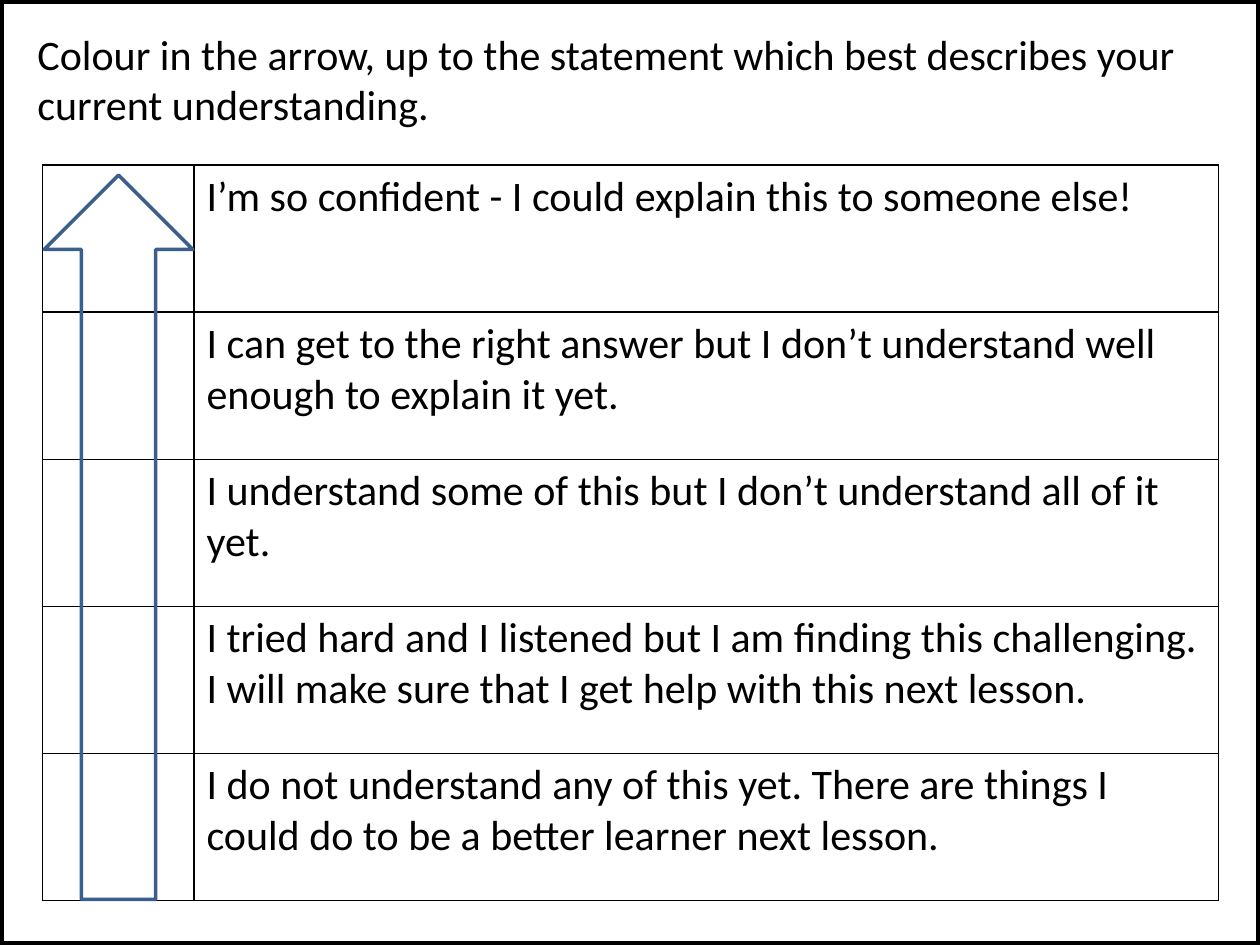
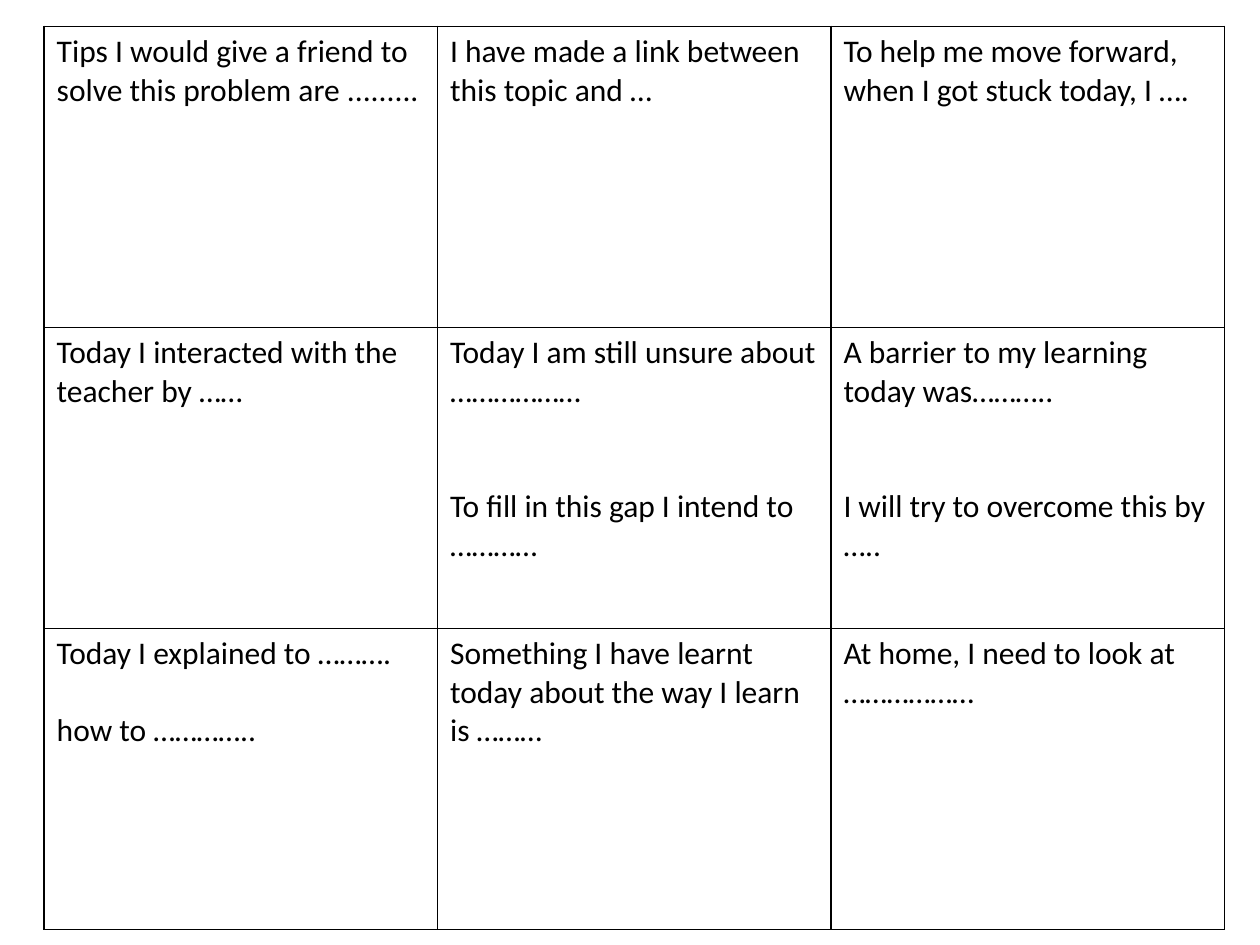
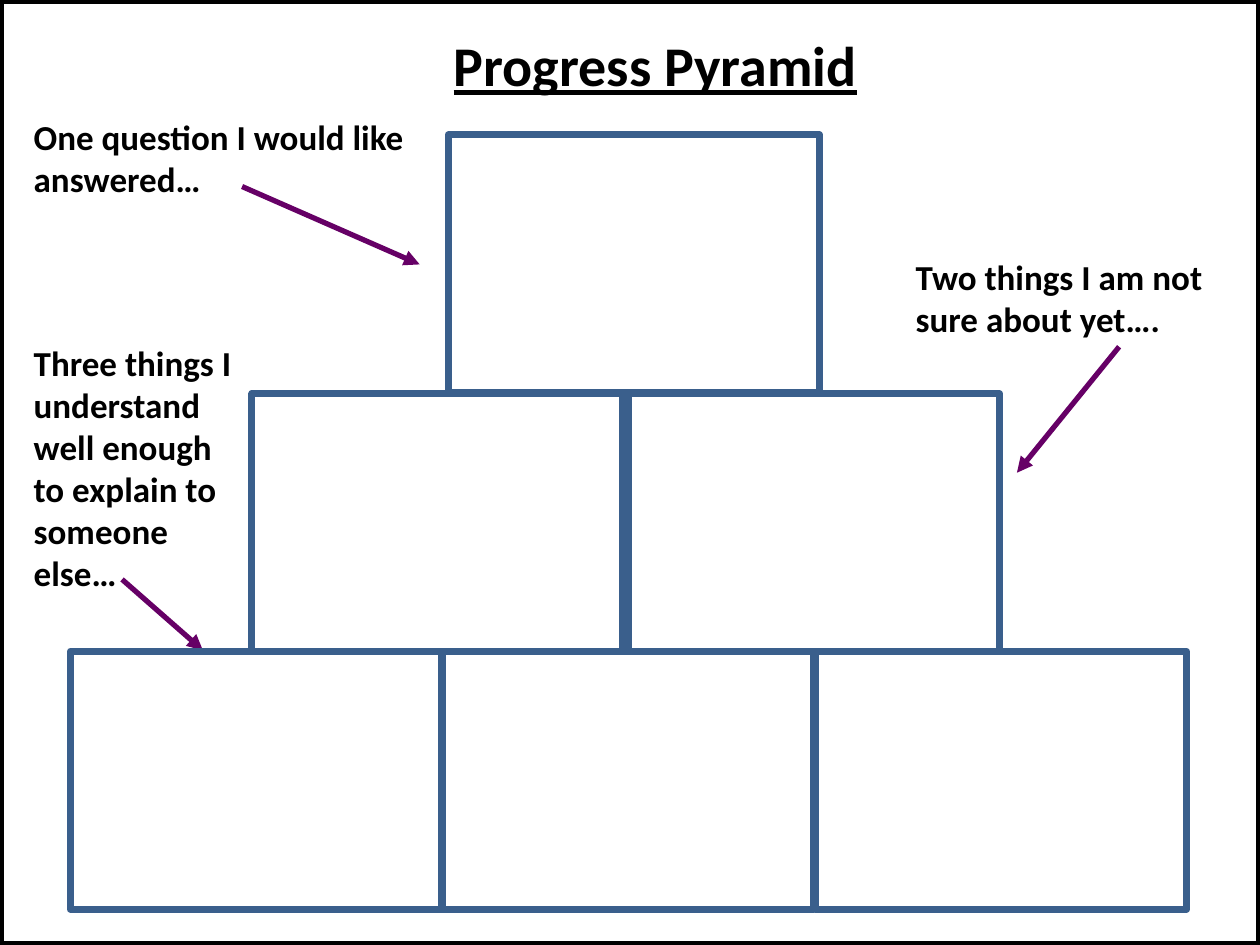
from dataclasses import dataclass

from lxml.etree import SubElement
from pptx import Presentation
from pptx.dml.color import RGBColor
from pptx.enum.shapes import MSO_CONNECTOR, MSO_SHAPE
from pptx.enum.text import MSO_ANCHOR, MSO_AUTO_SIZE, PP_ALIGN
from pptx.oxml.ns import qn
from pptx.slide import Slide
from pptx.table import _Cell
from pptx.text.text import TextFrame
from pptx.util import Cm, Pt


@dataclass(frozen=True)
class Theme:
    font: str = "Calibri"
    ink: str = "000000"
    outline: str = "3A5F8C"
    pointer: str = "660066"
    heading_size: int = 32
    statement_size: int = 24
    label_size: int = 20
    prompt_size: int = 18
    frame_width: int = 5
    brick_width: int = 4
    pointer_width: int = 3
    arrow_width: int = 2
    grid_width: int = 1


THEME = Theme()
PAGE_WIDTH, PAGE_HEIGHT = 25.4, 19.05


@dataclass(frozen=True)
class Area:
    """A rectangle in centimetres."""
    left: float
    top: float
    width: float
    height: float

    def lengths(self) -> tuple[Cm, Cm, Cm, Cm]:
        return Cm(self.left), Cm(self.top), Cm(self.width), Cm(self.height)


@dataclass(frozen=True)
class Style:
    size: int
    bold: bool = False
    underline: bool = False
    align: PP_ALIGN = PP_ALIGN.LEFT


@dataclass(frozen=True)
class Prompt:
    """Cell paragraphs, with a writing gap in points between them."""
    texts: tuple[str, ...]
    gap: int = 0


@dataclass(frozen=True)
class Label:
    text: str
    area: Area
    arrow_start: tuple[float, float]
    arrow_end: tuple[float, float]


@dataclass(frozen=True)
class Tier:
    left: float
    top: float
    bricks: int
    pitch: float


# Slide content
STATEMENTS = (
    "I’m so confident - I could explain this to someone else!",
    "I can get to the right answer but I don’t understand well enough to explain it yet.",
    "I understand some of this but I don’t understand all of it yet.",
    "I tried hard and I listened but I am finding this challenging. "
    "I will make sure that I get help with this next lesson.",
    "I do not understand any of this yet. "
    "There are things I could do to be a better learner next lesson.",
)
PROMPTS = (
    (
        Prompt(("Tips I would give a friend to solve this problem are .........",)),
        Prompt(("I have made a link between this topic and …",)),
        Prompt(("To help me move forward, when I got stuck today, I ….",)),
    ),
    (
        Prompt(("Today I interacted with the teacher by ……",)),
        Prompt(("Today I am still unsure about ………………",
                "To fill in this gap I intend to …………"), 44),
        Prompt(("A barrier to my learning today was………..",
                "I will try to overcome this by ….."), 44),
    ),
    (
        Prompt(("Today I explained to ……….", "how to ………….."), 22),
        Prompt(("Something I have learnt today about the way I learn is ………",)),
        Prompt(("At home, I need to look at ………………",)),
    ),
)
LABELS = (
    Label("One question I would like answered…",
          Area(0.43, 2.21, 8.15, 1.96), (4.88, 3.76), (8.46, 5.33)),
    Label("Two things I am not sure about yet….",
          Area(18.21, 5.03, 6.71, 1.96), (22.56, 6.99), (20.5, 9.53)),
    Label("Three things I understand well enough to explain to someone else…",
          Area(0.43, 6.76, 4.72, 5.38), (2.46, 11.68), (4.09, 13.11)),
)
TIERS = (
    Tier(1.42, 13.13, 3, 7.51),
    Tier(5.08, 7.94, 2, 7.59),
    Tier(9.04, 2.72, 1, 0),
)
BRICK_WIDTH, BRICK_HEIGHT = 7.48, 5.2


# Shared drawing functions
def write(frame: TextFrame, texts: tuple[str, ...], style: Style, gap: int = 0) -> None:
    for index, text in enumerate(texts):
        para = frame.paragraphs[0] if index == 0 else frame.add_paragraph()
        para.alignment = style.align
        if index:
            para.space_before = Pt(gap)
        span = para.add_run()
        span.text = text
        span.font.name = THEME.font
        span.font.size = Pt(style.size)
        span.font.bold = style.bold
        span.font.underline = style.underline
        span.font.color.rgb = RGBColor.from_string(THEME.ink)


def add_title(page: Slide, text: str, area: Area, style: Style) -> None:
    title = page.shapes.title
    title.left, title.top, title.width, title.height = area.lengths()
    frame = title.text_frame
    frame.word_wrap = True
    frame.auto_size = MSO_AUTO_SIZE.NONE
    frame.vertical_anchor = MSO_ANCHOR.MIDDLE
    write(frame, (text,), style)


def add_outline(page: Slide, preset: MSO_SHAPE, area: Area, color: str, width: int) -> None:
    shape = page.shapes.add_shape(preset, *area.lengths())
    shape.shadow.inherit = False
    shape.fill.background()
    shape.line.color.rgb = RGBColor.from_string(color)
    shape.line.width = Pt(width)


def add_frame(page: Slide) -> None:
    add_outline(page, MSO_SHAPE.RECTANGLE, Area(0, 0, PAGE_WIDTH, PAGE_HEIGHT),
                THEME.ink, THEME.frame_width)


def border_cell(cell: _Cell) -> None:
    properties = cell._tc.get_or_add_tcPr()
    for side in ("a:lnL", "a:lnR", "a:lnT", "a:lnB"):
        line = SubElement(properties, qn(side), w=str(Pt(THEME.grid_width)))
        fill = SubElement(line, qn("a:solidFill"))
        SubElement(fill, qn("a:srgbClr"), val=THEME.ink)
    cell.fill.background()


def add_grid(page: Slide, area: Area, columns: tuple[float, ...],
             rows: tuple[tuple[Prompt, ...], ...], style: Style) -> None:
    table = page.shapes.add_table(len(rows), len(columns), *area.lengths()).table
    table.first_row = table.horz_banding = False
    for column, width in zip(table.columns, columns):
        column.width = Cm(width)
    for row, prompts in zip(table.rows, rows):
        row.height = Cm(area.height / len(rows))
        for cell, prompt in zip(row.cells, prompts):
            border_cell(cell)
            write(cell.text_frame, prompt.texts, style, prompt.gap)


def add_label(page: Slide, label: Label) -> None:
    points = (Cm(value) for value in label.arrow_start + label.arrow_end)
    arrow = page.shapes.add_connector(MSO_CONNECTOR.STRAIGHT, *points)
    arrow.line.color.rgb = RGBColor.from_string(THEME.pointer)
    arrow.line.width = Pt(THEME.pointer_width)
    SubElement(arrow.line._get_or_add_ln(), qn("a:tailEnd"), type="triangle")
    SubElement(arrow._element.spPr, qn("a:effectLst"))
    box = page.shapes.add_textbox(*label.area.lengths())
    box.text_frame.word_wrap = True
    write(box.text_frame, (label.text,), Style(THEME.label_size, bold=True))


# Slides
def build_confidence_page(page: Slide) -> None:
    style = Style(THEME.statement_size)
    add_title(page, "Colour in the arrow, up to the statement which best describes "
              "your current understanding.", Area(0.5, 0.43, 23.85, 2.31), style)
    rows = tuple((Prompt(()), Prompt((text,))) for text in STATEMENTS)
    add_grid(page, Area(0.86, 3.33, 23.7, 14.82), (3.05, 20.65), rows, style)
    add_outline(page, MSO_SHAPE.UP_ARROW, Area(0.89, 3.53, 3, 14.6),
                THEME.outline, THEME.arrow_width)
    add_frame(page)


def build_reflection_page(page: Slide) -> None:
    add_grid(page, Area(0.89, 0.53, 23.79, 18.21), (7.93,) * 3, PROMPTS,
             Style(THEME.prompt_size))


def build_pyramid_page(page: Slide) -> None:
    add_title(page, "Progress Pyramid", Area(7.29, 0.48, 11.84, 1.63),
              Style(THEME.heading_size, True, True, PP_ALIGN.CENTER))
    for label in LABELS:
        add_label(page, label)
    for tier in TIERS:
        for index in range(tier.bricks):
            brick = Area(tier.left + index * tier.pitch, tier.top, BRICK_WIDTH, BRICK_HEIGHT)
            add_outline(page, MSO_SHAPE.RECTANGLE, brick, THEME.outline, THEME.brick_width)
    add_frame(page)


def main() -> None:
    deck = Presentation()
    deck.slide_width, deck.slide_height = Cm(PAGE_WIDTH), Cm(PAGE_HEIGHT)
    title_only, blank = deck.slide_layouts[5], deck.slide_layouts[6]
    build_confidence_page(deck.slides.add_slide(title_only))
    build_reflection_page(deck.slides.add_slide(blank))
    build_pyramid_page(deck.slides.add_slide(title_only))
    deck.save("out.pptx")


if __name__ == "__main__":
    main()
